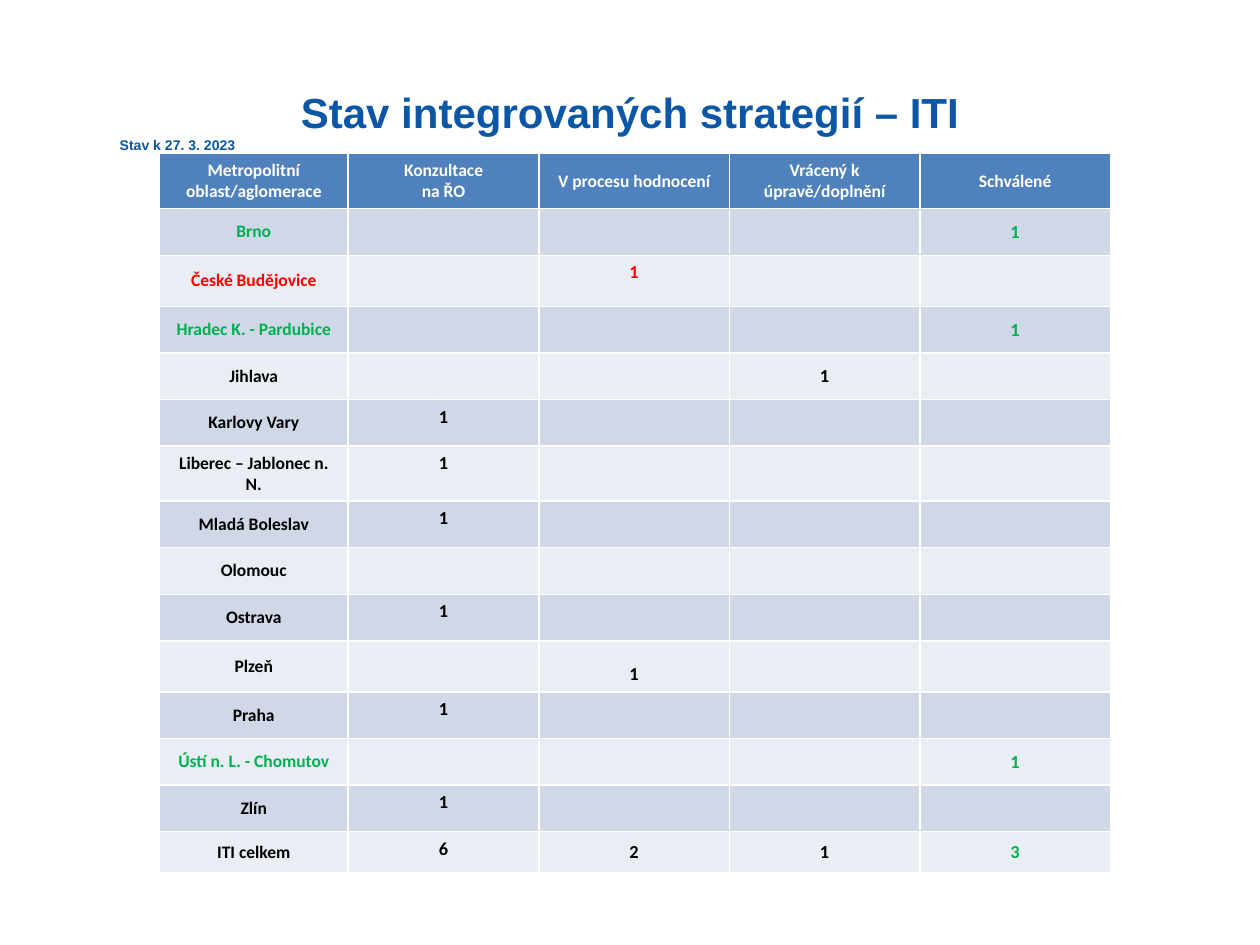
from pptx import Presentation
from pptx.dml.color import RGBColor
from pptx.enum.text import MSO_ANCHOR as Anchor, PP_ALIGN as Align
from pptx.util import Pt

BLUE = RGBColor(0x0C, 0x56, 0xA6)
HEADER_FILL = RGBColor(0x4F, 0x81, 0xBD)
DARK_BAND = RGBColor(0xD0, 0xD8, 0xE8)
LIGHT_BAND = RGBColor(0xE9, 0xED, 0xF4)
WHITE = RGBColor(0xFF, 0xFF, 0xFF)
BLACK = RGBColor(0, 0, 0)
GREEN = RGBColor(0x00, 0xB0, 0x50)
RED = RGBColor(0xFF, 0, 0)

HEADERS = ["Metropolitní oblast/aglomerace", "Konzultace\nna ŘO", "V procesu hodnocení",
           "Vrácený k úpravě/doplnění", "Schválené"]
CONSULTED, ASSESSED, RETURNED, APPROVED = 1, 2, 3, 4
# Area, status column (None if no strategy yet), text colour, row height
AREAS = [
    ("Brno", APPROVED, GREEN, 26.6),
    ("České Budějovice", ASSESSED, RED, 29.3),
    ("Hradec K. - Pardubice", APPROVED, GREEN, 26.6),
    ("Jihlava", RETURNED, BLACK, 26.6),
    ("Karlovy Vary", CONSULTED, BLACK, 26.6),
    ("Liberec – Jablonec n. N.", CONSULTED, BLACK, 30.9),
    ("Mladá Boleslav", CONSULTED, BLACK, 26.6),
    ("Olomouc", None, BLACK, 26.6),
    ("Ostrava", CONSULTED, BLACK, 26.6),
    ("Plzeň", ASSESSED, BLACK, 29.3),
    ("Praha", CONSULTED, BLACK, 26.6),
    ("Ústí n. L. - Chomutov", APPROVED, GREEN, 26.6),
    ("Zlín", CONSULTED, BLACK, 26.6),
]
HEADER_HEIGHT, TOTAL_HEIGHT = 30.9, 23.7
ANCHORS = {"České Budějovice": Anchor.TOP, "Plzeň": Anchor.BOTTOM}


def style_paragraph(paragraph, align, size, color, font_name):
    paragraph.alignment = align
    for run in paragraph.runs:
        run.font.name = font_name
        run.font.size = Pt(size)
        run.font.bold = True
        run.font.color.rgb = color


def write_cell(cell, text, size, color, anchor=Anchor.MIDDLE):
    cell.text = text
    cell.vertical_anchor = anchor
    for paragraph in cell.text_frame.paragraphs:
        style_paragraph(paragraph, Align.CENTER, size, color, "Calibri")


prs = Presentation()
prs.slide_width, prs.slide_height = Pt(720), Pt(540)
slide = prs.slides.add_slide(prs.slide_layouts[5])

title = slide.shapes.title
title.left, title.top, title.width, title.height = Pt(61.2), Pt(21.6), Pt(597.6), Pt(66.2)
heading = title.text_frame
heading.text = "Stav integrovaných strategií – ITI\nStav k 27. 3. 2023"
heading.vertical_anchor = Anchor.BOTTOM
heading.margin_bottom = 0
style_paragraph(heading.paragraphs[0], Align.CENTER, 24, BLUE, "Arial")
style_paragraph(heading.paragraphs[1], Align.LEFT, 8, BLUE, "Arial")

heights = [HEADER_HEIGHT] + [area[3] for area in AREAS] + [TOTAL_HEIGHT]
table = slide.shapes.add_table(len(heights), len(HEADERS), Pt(91), Pt(87.8),
                               Pt(543.6), Pt(sum(heights))).table
for column, width in zip(table.columns, [108, 108.9, 108.9, 108.9, 108.9]):
    column.width = Pt(width)
for row_index, height in enumerate(heights):
    table.rows[row_index].height = Pt(height)
    band = DARK_BAND if row_index % 2 else LIGHT_BAND
    for cell in table.rows[row_index].cells:
        cell.fill.solid()
        cell.fill.fore_color.rgb = band if row_index else HEADER_FILL
    table.cell(row_index, 0).margin_left = table.cell(row_index, 0).margin_right = Pt(9)

for column_index, header in enumerate(HEADERS):
    write_cell(table.cell(0, column_index), header, 10, WHITE)

for row_index, (area, status, color, _) in enumerate(AREAS, start=1):
    write_cell(table.cell(row_index, 0), area, 10, color)
    if status:
        default_anchor = Anchor.TOP if status == CONSULTED else Anchor.MIDDLE
        write_cell(table.cell(row_index, status), "1", 10.5, color,
                   ANCHORS.get(area, default_anchor))

total_row = len(heights) - 1
write_cell(table.cell(total_row, 0), "ITI celkem", 10, BLACK)
for status in (CONSULTED, ASSESSED, RETURNED, APPROVED):
    count = sum(area[1] == status for area in AREAS)
    write_cell(table.cell(total_row, status), str(count), 10.5,
               GREEN if status == APPROVED else BLACK,
               Anchor.TOP if status == CONSULTED else Anchor.MIDDLE)

# Blank cells must not stretch their rows
for cell in table.iter_cells():
    if not cell.text:
        cell.margin_top = cell.margin_bottom = 0

prs.save("out.pptx")
